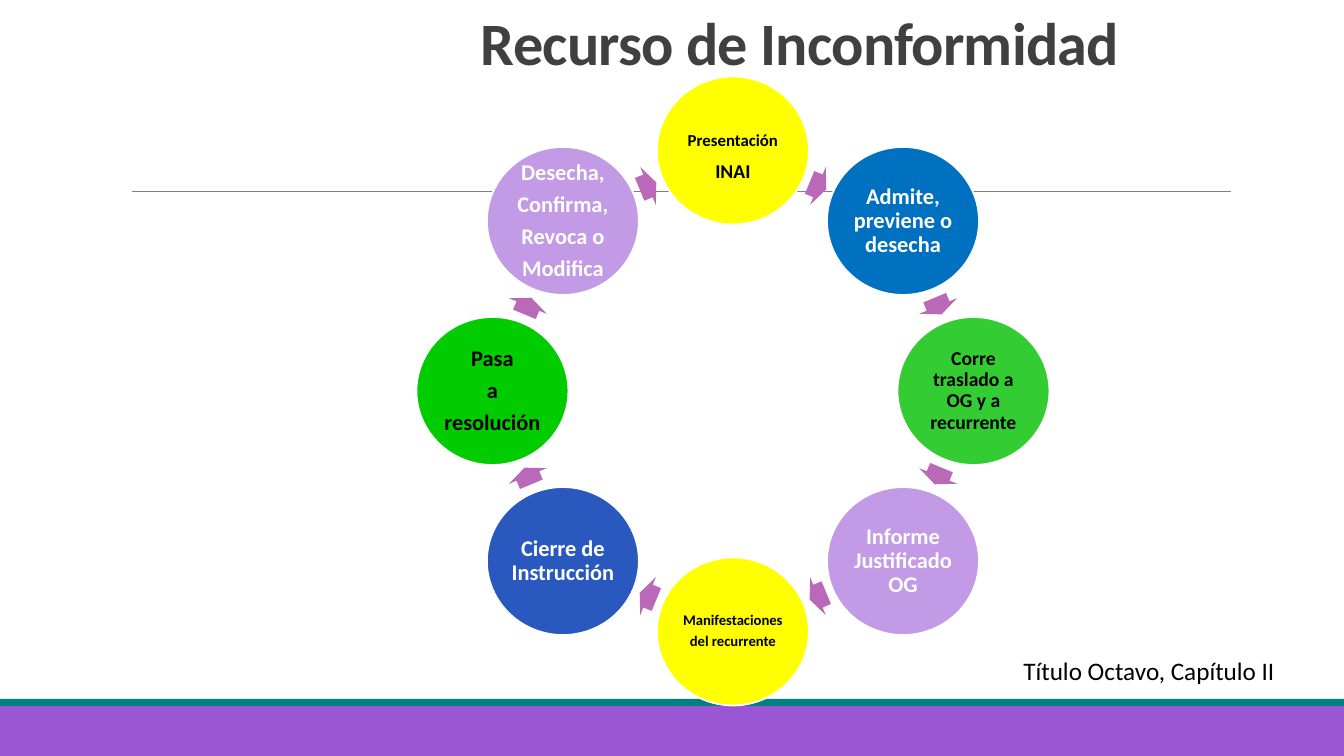
import math

from lxml import etree
from pptx import Presentation
from pptx import util as u
from pptx.dml.color import RGBColor
from pptx.enum import shapes, text
from pptx.oxml.ns import qn

SCALE = 914400 / 100.8
COLOURS = {
    "white": "FFFFFF", "black": "000000", "title": "404040", "rule": "808080",
    "purple": "9B57D3", "teal": "008080", "arrow": "BA69B8", "yellow": "FFFF00",
    "blue": "0070C0", "green": "33CC33", "lilac": "C39AE5", "royal": "2958BE",
    "bright green": "00CC00",
}
STEPS = [
    ("yellow", "black", [("Presentación", 12, 8), ("INAI", 14, 0)], 16),
    ("blue", "white", [("Admite, previene o desecha", 16, 0)], 2),
    ("green", "black", [("Corre traslado a OG y a recurrente", 14, 0)], 2),
    ("lilac", "white", [("Informe Justificado OG", 16, 0)], 2),
    ("yellow", "black", [("Manifestaciones", 10.5, 3.7), ("del recurrente", 10.5, 0)], 2),
    ("royal", "white", [("Cierre de Instrucción", 16, 0)], 2),
    ("bright green", "black",
     [(line, 16, 5.6) for line in ("Pasa", "a", "resolución")], 2),
    ("lilac", "white",
     [(line, 16, 5.6) for line in ("Desecha,", "Confirma,", "Revoca o", "Modifica")], 2),
]
CENTRE_X, CENTRE_Y = 733, 391
STEP_RADIUS, ARROW_RADIUS = 240.5, 222


def px(length):
    return u.Emu(round(length * SCALE))


def colour(name):
    return RGBColor.from_string(COLOURS[name])


def on_ring(radius, degrees, width, height):
    angle = math.radians(degrees)
    left = CENTRE_X + radius * math.sin(angle) - width / 2
    top = CENTRE_Y - radius * math.cos(angle) - height / 2
    return left, top, width, height


class Deck:
    """Holds the style and the current slide, and draws each kind of element."""

    def __init__(self, font):
        self.font = font
        self.presentation = Presentation()
        self.presentation.slide_width = px(1344)
        self.presentation.slide_height = px(756)
        layout = self.presentation.slide_layouts[5]
        self.slide = self.presentation.slides.add_slide(layout)

    def add_words(self, paragraph, words, size, ink, bold=False):
        paragraph.alignment = text.PP_ALIGN.CENTER
        run = paragraph.add_run()
        run.text = words
        font = paragraph.font
        font.name, font.size, font.bold = self.font, u.Pt(size), bold
        font.color.rgb = colour(ink)
        return run

    def title(self, box, words):
        shape = self.slide.shapes.title
        shape.left, shape.top, shape.width, shape.height = map(px, box)
        frame = shape.text_frame
        frame.auto_size = text.MSO_AUTO_SIZE.NONE
        frame.vertical_anchor = text.MSO_ANCHOR.BOTTOM
        paragraph = frame.paragraphs[0]
        paragraph.line_spacing = 0.85
        run = self.add_words(paragraph, words, 43, "title", True)
        run._r.get_or_add_rPr().set("spc", "-50")

    def caption(self, box, words):
        frame = self.slide.shapes.add_textbox(*map(px, box)).text_frame
        frame.word_wrap = True
        self.add_words(frame.paragraphs[0], words, 18, "black")

    def shape(self, kind, box, fill, outline=None):
        shape = self.slide.shapes.add_shape(kind, *map(px, box))
        shape.shadow.inherit = False
        shape.fill.solid()
        shape.fill.fore_color.rgb = colour(fill)
        if outline:
            shape.line.color.rgb = colour(outline)
            shape.line.width = u.Pt(1.25)
        else:
            shape.line.fill.background()
        return shape

    def rule(self, left, right, y):
        line = self.slide.shapes.add_connector(
            shapes.MSO_CONNECTOR.STRAIGHT, px(left), px(y), px(right), px(y))
        line.line.color.rgb = colour("rule")
        line.line.width = u.Pt(0.5)
        etree.SubElement(line._element.spPr, qn("a:effectLst"))

    def step(self, degrees, fill, ink, lines, top_margin):
        box = on_ring(STEP_RADIUS, degrees, 152, 148)
        frame = self.shape(shapes.MSO_SHAPE.OVAL, box, fill, "white").text_frame
        frame.word_wrap = True
        frame.vertical_anchor = text.MSO_ANCHOR.MIDDLE
        frame.margin_left = frame.margin_right = frame.margin_bottom = px(2)
        frame.margin_top = px(top_margin)
        for index, (words, size, gap) in enumerate(lines):
            paragraph = frame.add_paragraph() if index else frame.paragraphs[0]
            paragraph.line_spacing = 0.9
            paragraph.space_after = u.Pt(gap)
            self.add_words(paragraph, words, size, ink, True)

    def arrow(self, degrees):
        box = on_ring(ARROW_RADIUS, degrees, 18, 41)
        shape = self.shape(shapes.MSO_SHAPE.RIGHT_ARROW, box, "arrow")
        shape.adjustments[0], shape.adjustments[1] = 0.6, 0.5
        shape.rotation = degrees


def main():
    deck = Deck("Calibri")
    deck.shape(shapes.MSO_SHAPE.RECTANGLE, (0, 706, 1344, 50), "purple")
    deck.shape(shapes.MSO_SHAPE.RECTANGLE, (0, 699, 1344, 7), "teal")
    deck.rule(132, 1231, 191)
    deck.title((272, -3, 1056, 86), "Recurso de Inconformidad")
    deck.caption((1002, 650, 294, 40), "Título Octavo, Capítulo II")
    angle = 360 / len(STEPS)
    for index, step in enumerate(STEPS):
        deck.step(index * angle, *step)
        deck.arrow((index + 0.5) * angle)
    deck.presentation.save("out.pptx")


if __name__ == "__main__":
    main()
